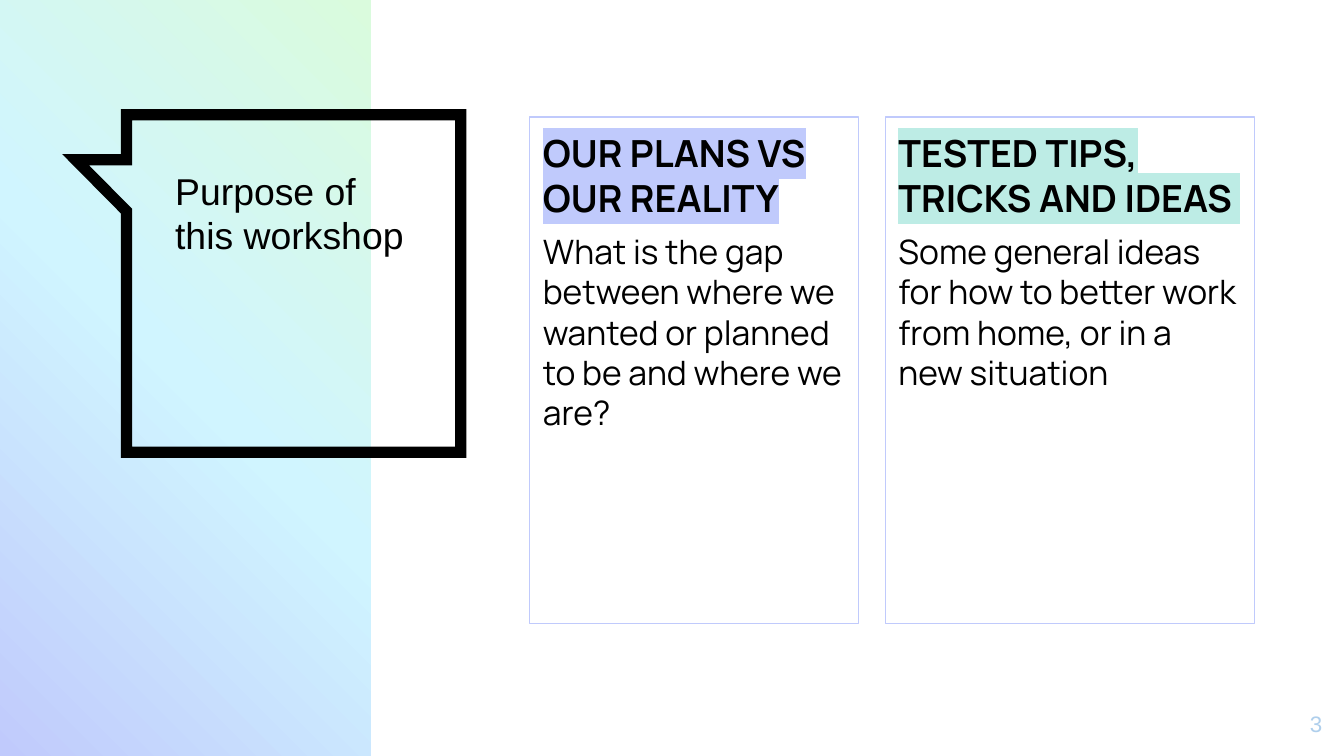
from copy import deepcopy

from lxml import etree
from pptx import Presentation
from pptx.dml.color import RGBColor
from pptx.enum.shapes import MSO_SHAPE
from pptx.enum.text import MSO_ANCHOR, MSO_AUTO_SIZE, PP_ALIGN
from pptx.oxml.ns import qn
from pptx.util import Cm, Pt

RECTANGLE = MSO_SHAPE.RECTANGLE
TOP = MSO_ANCHOR.TOP
NO_AUTOFIT = MSO_AUTO_SIZE.NONE
LEFT, RIGHT = PP_ALIGN.LEFT, PP_ALIGN.RIGHT

BLACK = RGBColor(0x00, 0x00, 0x00)
LAVENDER = RGBColor(0xC0, 0xCA, 0xFC)
SKY = RGBColor(0xD0, 0xF5, 0xFF)
LIME = RGBColor(0xDA, 0xFB, 0xDD)
MINT = RGBColor(0xBD, 0xEC, 0xE5)
PALE_BLUE = RGBColor(0xAF, 0xCF, 0xEC)

WIDTH, HEIGHT = 25.4, 14.29
TWO_CONTENT = 3
CARD_TOP, CARD_HEIGHT = 2.21, 9.58

BUBBLE = [(2.39, 2.17), (8.71, 2.17), (8.71, 8.55), (2.39, 8.55),
          (2.39, 3.99), (1.43, 3.02), (2.39, 3.02)]


def apply(target, values):
    for name, value in values.items():
        setattr(target, name, value)


class WorkshopSlide:
    frame = {"word_wrap": True, "auto_size": NO_AUTOFIT, "vertical_anchor": TOP,
             "margin_left": Cm(0.25), "margin_right": Cm(0.25),
             "margin_top": Cm(0.25), "margin_bottom": Cm(0.25)}
    title_font = {"name": "Arial", "size": Pt(20), "bold": False}
    heading_font = {"name": "Manrope", "size": Pt(20), "bold": True}
    text_font = {"name": "Manrope", "size": Pt(18), "bold": False}
    number_font = {"name": "Arial", "size": Pt(12), "bold": False}

    def __init__(self, deck):
        self.page = deck.slides.add_slide(deck.slide_layouts[TWO_CONTENT])

    def panel(self, left, top, width, height, colours):
        """Rectangle with a gradient that rises to the upper right."""
        box = self.page.shapes.add_shape(
            RECTANGLE, Cm(left), Cm(top), Cm(width), Cm(height))
        box.shadow.inherit = False
        box.line.fill.background()
        box.fill.gradient()
        box.fill.gradient_angle = 45
        stop_list = box.element.spPr.find(".//" + qn("a:gsLst"))
        stop_list.append(deepcopy(stop_list[0]))
        for index, (stop, colour) in enumerate(zip(box.fill.gradient_stops, colours)):
            stop.color.rgb = colour
            stop.position = index / (len(colours) - 1)

    def outline(self, points, colour, weight):
        corners = [(Cm(x), Cm(y)) for x, y in points]
        builder = self.page.shapes.build_freeform(*corners[0])
        builder.add_line_segments(corners[1:], close=True)
        box = builder.convert_to_shape()
        box.shadow.inherit = False
        box.fill.background()
        box.line.color.rgb = colour
        box.line.width = Pt(weight)
        line = box.element.spPr.find(qn("a:ln"))
        etree.SubElement(line, qn("a:miter"), lim="800000")

    def place(self, box, left, top, width, height):
        """Position a text holder, bring it to the front and return its text frame."""
        apply(box, {"left": Cm(left), "top": Cm(top),
                    "width": Cm(width), "height": Cm(height)})
        box.element.getparent().append(box.element)
        apply(box.text_frame, self.frame)
        return box.text_frame

    def add_text(self, para, text, font, colour=BLACK, highlight=None, **spacing):
        apply(para, {"alignment": LEFT, "space_before": Pt(0), **spacing})
        span = para.add_run()
        span.text = text
        apply(span.font, font)
        span.font.color.rgb = colour
        if highlight is not None:
            mark = etree.Element(qn("a:highlight"))
            etree.SubElement(mark, qn("a:srgbClr"), val=str(highlight))
            span._r.rPr.find(qn("a:solidFill")).addnext(mark)

    def title(self, text, *area):
        frame = self.place(self.page.shapes.title, *area)
        self.add_text(frame.paragraphs[0], text, self.title_font, line_spacing=Pt(24))

    def card(self, index, left, width, heading, text, highlight):
        box = self.page.placeholders[index]
        frame = self.place(box, left, CARD_TOP, width, CARD_HEIGHT)
        box.line.color.rgb = LAVENDER
        box.line.width = Pt(0.75)
        self.add_text(frame.paragraphs[0], heading, self.heading_font,
                      highlight=highlight, space_before=Pt(6), line_spacing=Pt(24))
        self.add_text(frame.add_paragraph(), text, self.text_font,
                      space_before=Pt(6), line_spacing=Pt(21.6))
        for para in frame.paragraphs:
            properties = para._p.get_or_add_pPr()
            properties.set("marL", "0")
            properties.set("indent", "0")
            etree.SubElement(properties, qn("a:buNone"))

    def page_number(self, text, *area):
        box = self.page.shapes.add_textbox(0, 0, 0, 0)
        frame = self.place(box, *area)
        self.add_text(frame.paragraphs[0], text, self.number_font,
                      PALE_BLUE, alignment=RIGHT)


def main():
    deck = Presentation()
    deck.slide_width, deck.slide_height = Cm(WIDTH), Cm(HEIGHT)

    slide = WorkshopSlide(deck)
    slide.panel(0, 0, 7.01, HEIGHT, [LAVENDER, SKY, LIME])
    slide.outline(BUBBLE, BLACK, 6)
    slide.title("Purpose of this workshop", 3.06, 2.92, 5.11, 5.31)
    slide.card(2, 16.73, 6.98, "TESTED TIPS, TRICKS AND IDEAS ",
               "Some general ideas for how to better work from home, "
               "or in a new situation", MINT)
    slide.card(1, 10.01, 6.22, "OUR PLANS VS OUR REALITY",
               "What is the gap between where we wanted or planned "
               "to be and where we are?", LAVENDER)
    slide.page_number("3", 23.72, 13.18, 1.52, 1.09)
    deck.save("out.pptx")


if __name__ == "__main__":
    main()
